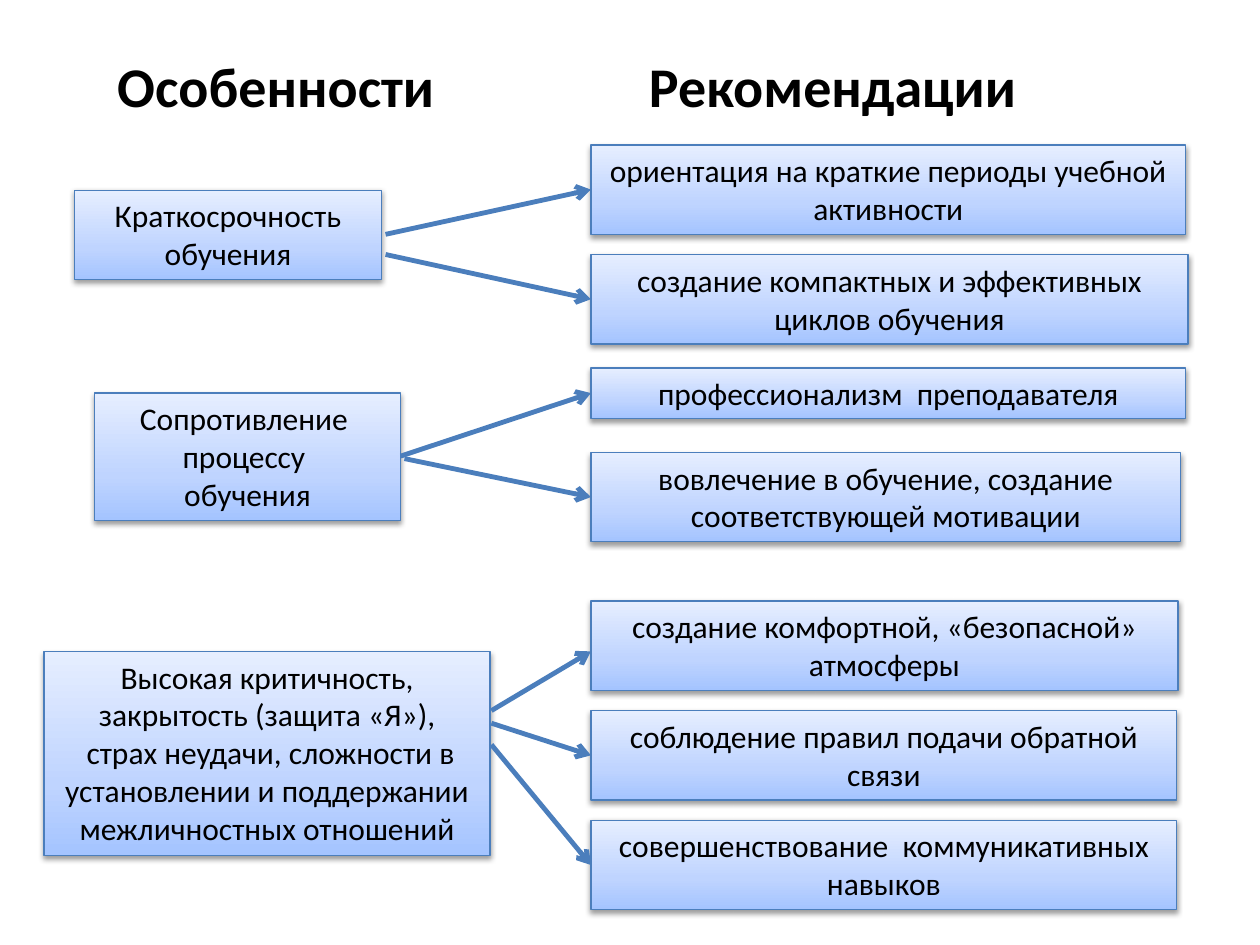
import copy
import dataclasses

import lxml.etree
import pptx
import pptx.dml.color
import pptx.enum.shapes
import pptx.enum.text
import pptx.oxml.ns
import pptx.util

Inches = pptx.util.Inches
Pt = pptx.util.Pt
qn = pptx.oxml.ns.qn


@dataclasses.dataclass(frozen=True)
class Theme:
    """Colours, font and sizes of the slide."""
    font: str = "Calibri"
    title_size: int = 32
    body_size: int = 18
    ink: str = "000000"
    line: str = "4B7EBC"
    box_line: float = 0.75
    arrow_line: float = 2.75
    gradient: tuple = ((0, "A4C4FF"), (0.35, "BFD4FF"), (1, "E6EEFF"))


@dataclasses.dataclass(frozen=True)
class Recommendation:
    """A recommendation and its arrow, measured from the top of its group."""
    text: str
    top: float
    width: float
    arrow_start: tuple
    height: float = 0.71
    arrow_drop: float = 0.355


@dataclasses.dataclass(frozen=True)
class Group:
    """A learner feature with its recommendations; boxes are left, top, width, height."""
    box: tuple
    feature_box: tuple
    feature_lines: tuple
    recommendations: tuple


THEME = Theme()
RECOMMENDATION_LEFT = 4.69
GROUPS = (
    Group((0, 1.15, 10, 1.58), (0.59, 0.36, 2.44, 0.71),
          ("Краткосрочность", "обучения"),
          (Recommendation("ориентация на краткие периоды учебной активности",
                          0, 4.72, (3.06, 0.71)),
           Recommendation("создание компактных и эффективных циклов обучения",
                          0.87, 4.74, (3.06, 0.87)))),
    Group((0, 2.92, 10, 1.38), (0.75, 0.2, 2.43, 1.01),
          ("Сопротивление ", "процессу ", "обучения"),
          (Recommendation("профессионализм  преподавателя",
                          0, 4.72, (3.18, 0.7), 0.4, 0.2),
           Recommendation("вовлечение в обучение, создание соответствующей мотивации",
                          0.67, 4.68, (3.21, 0.72)))),
    Group((0, 4.77, 10, 2.45), (0.35, 0.4, 3.54, 1.62),
          ("Высокая критичность, закрытость (защита «Я»),",
           " страх неудачи, сложности в установлении и поддержании межличностных отношений"),
          (Recommendation("создание комфортной, «безопасной» атмосферы",
                          0, 4.66, (3.9, 0.87), arrow_drop=0.4),
           Recommendation("соблюдение правил подачи обратной связи",
                          0.87, 4.65, (3.9, 0.97)),
           Recommendation("совершенствование  коммуникативных навыков",
                          1.74, 4.65, (3.9, 1.14)))),
)


def rgb(value):
    """Return the colour for a hex value."""
    return pptx.dml.color.RGBColor.from_string(value)


def add_run(paragraph, text, size, bold=False):
    """Add one formatted run to a paragraph."""
    run = paragraph.add_run()
    run.text = text
    run.font.name = THEME.font
    run.font.size = Pt(size)
    run.font.bold = bold
    run.font.color.rgb = rgb(THEME.ink)


def add_headings(slide, box, left_heading, right_heading, tab):
    """Place both column headings in the title, parted by a tab stop."""
    title = slide.shapes.title
    title.left, title.top, title.width, title.height = map(Inches, box)
    frame = title.text_frame
    frame.word_wrap = True
    frame.auto_size = pptx.enum.text.MSO_AUTO_SIZE.SHAPE_TO_FIT_TEXT
    frame.vertical_anchor = pptx.enum.text.MSO_ANCHOR.TOP
    paragraph = frame.paragraphs[0]
    paragraph.alignment = pptx.enum.text.PP_ALIGN.LEFT
    tabs = lxml.etree.SubElement(paragraph._p.get_or_add_pPr(), qn("a:tabLst"))
    lxml.etree.SubElement(tabs, qn("a:tab"), pos=str(Inches(tab)), algn="l")
    for text in (left_heading, "\t", right_heading):
        add_run(paragraph, text, THEME.title_size, True)


def fill_with_gradient(shape):
    """Fill a shape with the theme gradient, darkest at the bottom."""
    shape.fill.gradient()
    shape.fill.gradient_angle = 90
    first_stop = shape._element.spPr.find(".//" + qn("a:gs"))
    first_stop.addnext(copy.deepcopy(first_stop))
    for stop, (position, colour) in zip(shape.fill.gradient_stops, THEME.gradient):
        stop.position = position
        stop.color.rgb = rgb(colour)


def add_soft_shadow(shape):
    """Give a shape a soft shadow that falls straight down."""
    shape.shadow.inherit = False
    effects = shape._element.spPr.find(qn("a:effectLst"))
    shadow = lxml.etree.SubElement(
        effects, qn("a:outerShdw"), blurRad=str(Pt(3.1)), dist=str(Pt(1.6)),
        dir="5400000", rotWithShape="0")
    colour = lxml.etree.SubElement(shadow, qn("a:srgbClr"), val=THEME.ink)
    lxml.etree.SubElement(colour, qn("a:alpha"), val="38000")


def add_card(slide, box, lines):
    """Add a gradient rectangle with centred paragraphs."""
    card = slide.shapes.add_shape(
        pptx.enum.shapes.MSO_SHAPE.RECTANGLE, *map(Inches, box))
    fill_with_gradient(card)
    add_soft_shadow(card)
    card.line.color.rgb = rgb(THEME.line)
    card.line.width = Pt(THEME.box_line)
    frame = card.text_frame
    frame.word_wrap = True
    frame.auto_size = pptx.enum.text.MSO_AUTO_SIZE.SHAPE_TO_FIT_TEXT
    frame.vertical_anchor = pptx.enum.text.MSO_ANCHOR.TOP
    for index, line in enumerate(lines):
        paragraph = frame.add_paragraph() if index else frame.paragraphs[0]
        paragraph.alignment = pptx.enum.text.PP_ALIGN.CENTER
        add_run(paragraph, line, THEME.body_size)


def add_arrow(slide, start, end):
    """Add a straight arrow between two points."""
    arrow = slide.shapes.add_connector(
        pptx.enum.shapes.MSO_CONNECTOR.STRAIGHT, *map(Inches, start + end))
    arrow.line.color.rgb = rgb(THEME.line)
    arrow.line.width = Pt(THEME.arrow_line)
    lxml.etree.SubElement(arrow.line._get_or_add_ln(), qn("a:tailEnd"), type="arrow")
    lxml.etree.SubElement(arrow._element.spPr, qn("a:effectLst"))


def add_group(slide, group):
    """Place a feature, its recommendations and the arrows within the group box."""
    left, top = group.box[:2]
    x, y, width, height = group.feature_box
    add_card(slide, (left + x, top + y, width, height), group.feature_lines)
    target = left + RECOMMENDATION_LEFT
    for item in group.recommendations:
        item_top = top + item.top
        add_card(slide, (target, item_top, item.width, item.height), (item.text,))
        start_x, start_y = item.arrow_start
        add_arrow(slide, (left + start_x, top + start_y),
                  (target, item_top + item.arrow_drop))


def main():
    """Build and save the slide."""
    deck = pptx.Presentation()
    deck.slide_width, deck.slide_height = Inches(10), Inches(7.5)
    slide = deck.slides.add_slide(deck.slide_layouts[5])
    add_headings(slide, (0.83, 0.36, 7.8, 0.64), "Особенности", "Рекомендации", 4.22)
    for group in GROUPS:
        add_group(slide, group)
    deck.save("out.pptx")


if __name__ == "__main__":
    main()
